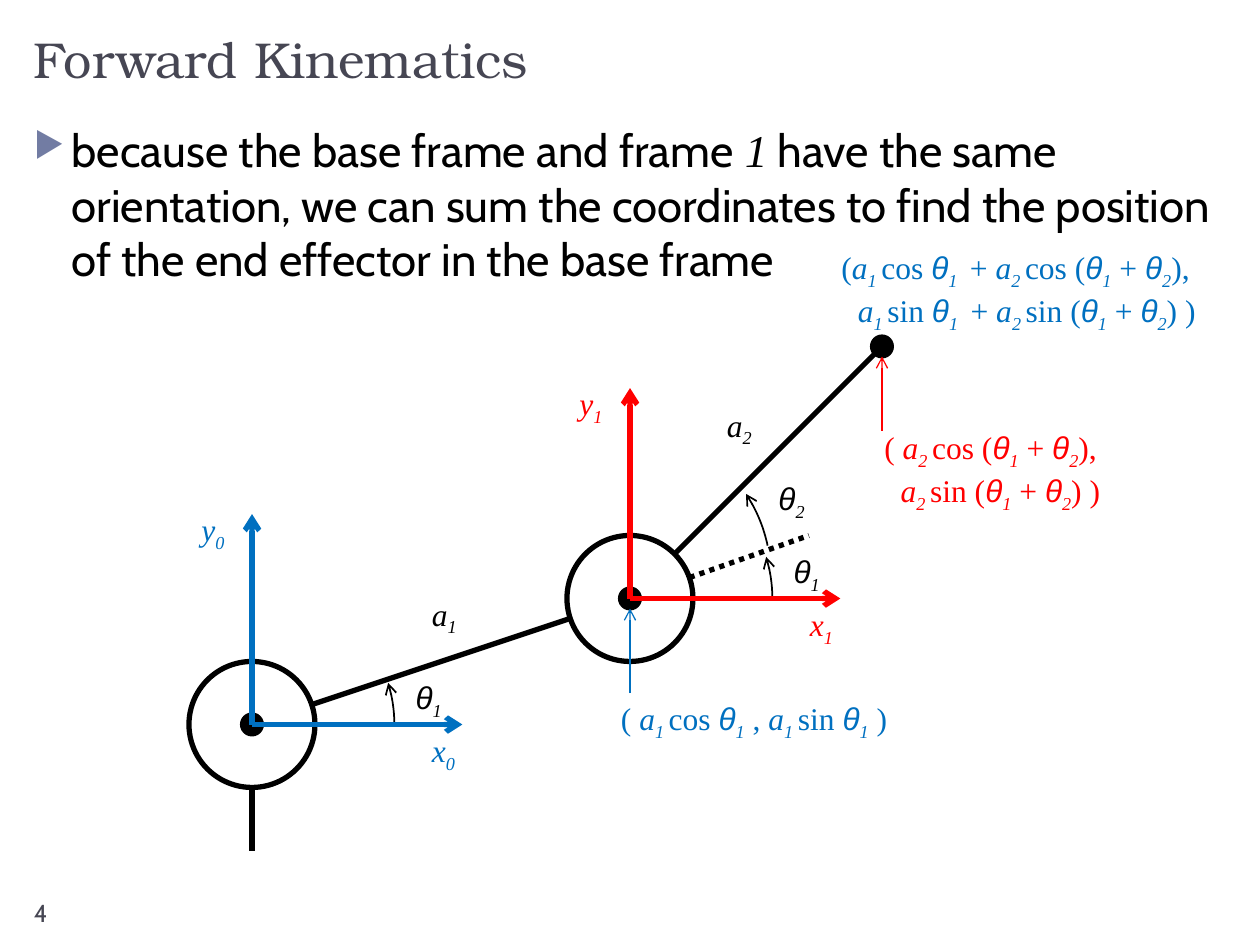
from dataclasses import dataclass
from math import cos, radians, sin

from lxml.etree import SubElement
from pptx import Presentation
from pptx.dml.color import RGBColor
from pptx.enum.dml import MSO_LINE
from pptx.enum.shapes import MSO_CONNECTOR, MSO_SHAPE
from pptx.enum.text import MSO_ANCHOR, MSO_AUTO_SIZE
from pptx.oxml.ns import qn
from pptx.util import Inches, Pt


@dataclass(frozen=True)
class Theme:
    """Colours, fonts and type sizes of the slide."""
    black: str = "000000"
    white: str = "FFFFFF"
    slate: str = "464653"
    mark: str = "727CA3"
    blue: str = "0070C0"
    red: str = "FF0000"
    head: str = "TeX Gyre Bonum"
    sans: str = "Cabin"
    math: str = "Times New Roman"
    greek: str = "Arial"
    title: float = 28.8
    body: float = 26
    label: float = 18
    page: float = 14
    thick: float = 3
    thin: float = 0.75


@dataclass(frozen=True)
class Box:
    """Left, top, width and height in inches."""
    x: float
    y: float
    w: float
    h: float

    def sub(self, x, y, w, h):
        """Return a box placed relative to this one."""
        return Box(self.x + x, self.y + y, w, h)

    def spot(self, x, y):
        """Return a point placed relative to this box."""
        return self.x + x, self.y + y

    def size(self):
        """Return the four lengths."""
        return [Inches(v) for v in (self.x, self.y, self.w, self.h)]


T = Theme()


def tag(node, name, **attrs):
    """Append a drawing element to a node."""
    return SubElement(node, qn(name), attrs)


def text(slide, box, *rows, font=T.math, size=T.label, color=T.black,
         wrap=False, anchor=MSO_ANCHOR.TOP, inset=0):
    """Write rows whose parts are split by |, where _ marks a subscript."""
    frame = slide.shapes.add_textbox(*box.size()).text_frame
    frame.word_wrap = wrap
    fit = MSO_AUTO_SIZE.NONE if wrap else MSO_AUTO_SIZE.SHAPE_TO_FIT_TEXT
    frame.auto_size = fit
    frame.vertical_anchor = anchor
    for i, row in enumerate(rows):
        para = frame.add_paragraph() if i else frame.paragraphs[0]
        if i and inset:
            para._p.get_or_add_pPr().set("marL", str(Inches(inset)))
        for part in row.split("|"):
            low = part.startswith("_")
            slant = low or part in "axyθ1"
            run = para.add_run()
            run.text = part.lstrip("_")
            run.font.name = T.greek if part == "θ" else T.math if slant else font
            run.font.size = Pt(size)
            run.font.italic = slant
            run.font.color.rgb = RGBColor.from_string(color)
            if low:
                run._r.get_or_add_rPr().set("baseline", "-25000")
    return frame


def stroke(shape, color, width):
    """Set the line of a shape."""
    shape.line.color.rgb = RGBColor.from_string(color)
    shape.line.width = Pt(width)


def line(slide, start, end, color=T.black, width=T.thick, dash=False, arrow=False):
    """Draw a straight line, dotted or with an arrowhead."""
    ends = [Inches(v) for v in (*start, *end)]
    rule = slide.shapes.add_connector(MSO_CONNECTOR.STRAIGHT, *ends)
    stroke(rule, color, width)
    if dash:
        rule.line.dash_style = MSO_LINE.ROUND_DOT
    props = rule._element.spPr
    if arrow:
        tag(props.get_or_add_ln(), "a:tailEnd", type="arrow")
    tag(props, "a:effectLst")


def disc(slide, mid, radius, fill, width):
    """Draw a circle around a point."""
    x, y = mid
    box = Box(x - radius, y - radius, 2 * radius, 2 * radius)
    shape = slide.shapes.add_shape(MSO_SHAPE.OVAL, *box.size())
    shape.shadow.inherit = False
    shape.fill.solid()
    shape.fill.fore_color.rgb = RGBColor.from_string(fill)
    stroke(shape, T.black, width)


def dot(slide, mid):
    """Draw a solid point."""
    disc(slide, mid, 0.085, T.black, 1.5)


def arc(slide, mid, far, near, top, low=0, steps=16):
    """Draw an angle arc whose arrowhead is at its top."""
    pts = []
    for i in range(steps + 1):
        part = i / steps
        reach = far + (near - far) * part
        turn = radians(top + (low - top) * part)
        pts.append((Inches(mid[0] + reach * cos(turn)),
                    Inches(mid[1] - reach * sin(turn))))
    curve = slide.shapes.build_freeform(*pts[0])
    curve.add_line_segments(pts[1:], close=False)
    shape = curve.convert_to_shape()
    shape.shadow.inherit = False
    shape.fill.background()
    stroke(shape, T.black, 1)
    tag(shape._element.spPr.get_or_add_ln(), "a:headEnd", type="arrow")


def title(slide, box):
    """Place the heading."""
    text(slide, box, "Forward Kinematics", font=T.head, size=T.title,
         color=T.slate, wrap=True, anchor=MSO_ANCHOR.BOTTOM)


def point(slide, box):
    """Place the bulleted statement."""
    frame = text(slide, box, "because the base frame and frame |1| have the same "
                 "orientation, we can sum the coordinates to find the position "
                 "of the end effector in the base frame",
                 font=T.sans, size=T.body, wrap=True)
    para = frame.paragraphs[0]
    para.space_before = Pt(6)
    props = para._p.get_or_add_pPr()
    props.set("marL", str(Inches(0.3)))
    props.set("indent", str(-Inches(0.3)))
    tag(tag(props, "a:buClr"), "a:srgbClr", val=T.mark)
    tag(props, "a:buSzPct", val="76000")
    tag(props, "a:buChar", char="▶")


def joint(slide, box, index, color):
    """Place a joint with its frame axes and first angle."""
    mid = box.spot(0.5, 1.67)
    disc(slide, mid, 0.5, T.white, T.thick)
    dot(slide, mid)
    arc(slide, mid, 1.13, 1.13, 17)
    text(slide, box.sub(1.7, 1.25, 0.42, 0.4), "θ|_1")
    for end in (box.spot(0.5, 0), box.spot(2.17, 1.67)):
        line(slide, mid, end, color, arrow=True)
    text(slide, box.sub(1.83, 1.67, 0.41, 0.4), f"x|_{index}", color=color)
    text(slide, box.sub(0, -0.08, 0.41, 0.4), f"y|_{index}", color=color)


def arm(slide, box):
    """Place the two-link arm with its labels."""
    base, elbow, tip = box.spot(0.5, 3), box.spot(3.5, 2), box.spot(5.5, 0)
    line(slide, base, box.spot(0.5, 4))
    line(slide, elbow, box.spot(4.92, 1.5), dash=True)
    line(slide, elbow, tip)
    line(slide, base, elbow)
    joint(slide, box.sub(0, 1.33, 2.17, 2.17), 0, T.blue)
    joint(slide, box.sub(3, 0.33, 2.17, 2.17), 1, T.red)
    dot(slide, tip)
    arc(slide, elbow, 1.24, 1.17, 42, 21)
    text(slide, box.sub(4.58, 1, 0.42, 0.4), "θ|_2")
    text(slide, box.sub(1.83, 1.92, 0.41, 0.4), "a|_1")
    text(slide, box.sub(4.17, 0.42, 0.41, 0.4), "a|_2")
    line(slide, box.spot(3.5, 2.75), box.spot(3.5, 2.08), T.blue, T.thin, arrow=True)
    line(slide, box.spot(5.5, 0.67), box.spot(5.5, 0.08), T.red, T.thin, arrow=True)


def sums(slide, box):
    """Place the coordinates of the elbow and the tip."""
    angle = "θ|_1| + |θ|_2"
    text(slide, box.sub(0, 3.58, 2.4, 0.4),
         "( |a|_1 |cos |θ|_1| , |a|_1 |sin |θ|_1| )", color=T.blue)
    text(slide, box.sub(2.09, 1.43, 2.02, 0.71), f"( |a|_2 |cos (|{angle}|),",
         f"a|_2 |sin (|{angle}|) )", color=T.red, inset=0.13)
    text(slide, box.sub(1.75, 0, 3.15, 0.71),
         f"(|a|_1 |cos |θ|_1 | + |a|_2 |cos (|{angle}|),",
         f"a|_1 |sin |θ|_1 | + |a|_2 |sin (|{angle}|) )", color=T.blue, inset=0.13)


def main():
    """Build and save the slide."""
    deck = Presentation()
    deck.slide_width, deck.slide_height = Inches(10), Inches(7.5)
    slide = deck.slides.add_slide(deck.slide_layouts[6])
    title(slide, Box(0.17, 0.17, 9.67, 0.58))
    point(slide, Box(0.17, 0.92, 9.67, 6))
    arm(slide, Box(1.5, 2.75, 5.5, 4))
    sums(slide, Box(4.83, 1.92, 4.9, 4))
    text(slide, Box(0.17, 7.08, 2.17, 0.27), "4", font=T.sans, size=T.page,
         color=T.slate, wrap=True)
    deck.save("out.pptx")


if __name__ == "__main__":
    main()
